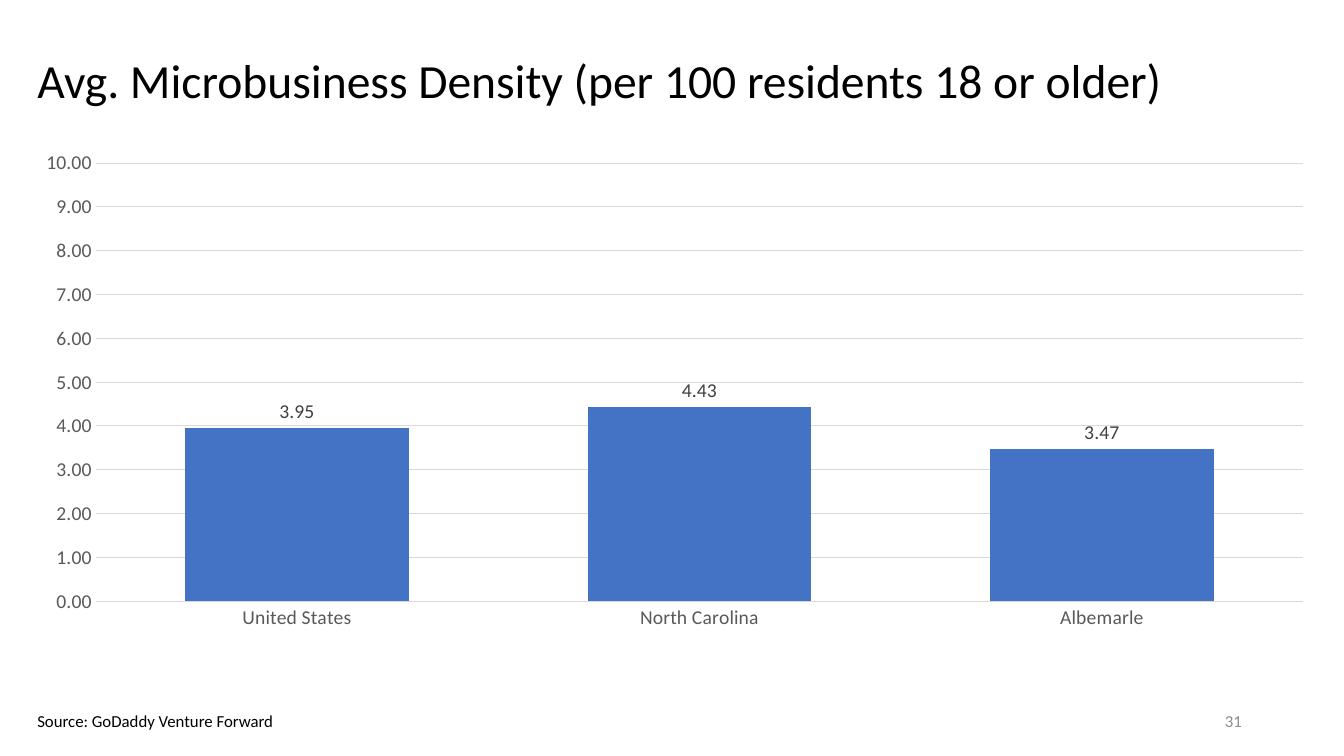
from lxml import etree
from pptx import Presentation
from pptx.chart.data import CategoryChartData
from pptx.dml.color import RGBColor
from pptx.enum.chart import XL_CHART_TYPE, XL_LABEL_POSITION, XL_TICK_MARK
from pptx.enum.text import MSO_ANCHOR, MSO_AUTO_SIZE, PP_ALIGN
from pptx.oxml.ns import qn
from pptx.util import Cm, Pt

COLUMN = XL_CHART_TYPE.COLUMN_CLUSTERED
OUTSIDE = XL_LABEL_POSITION.OUTSIDE_END
NO_TICK = XL_TICK_MARK.NONE
MIDDLE, TOP = MSO_ANCHOR.MIDDLE, MSO_ANCHOR.TOP
NO_FIT = MSO_AUTO_SIZE.NONE
LEFT, RIGHT = PP_ALIGN.LEFT, PP_ALIGN.RIGHT
EDGE = Cm(0.69)


def style(font, size, color):
    font.name = "Calibri"
    font.size = Pt(size)
    font.color.rgb = RGBColor.from_string(color)


def write(box, text, size, color, align, anchor, wrap):
    frame = box.text_frame
    frame.auto_size = NO_FIT
    frame.word_wrap = wrap
    frame.vertical_anchor = anchor
    line = frame.paragraphs[0]
    line.alignment = align
    run = line.add_run()
    run.text = text
    style(run.font, size, color)
    return line


deck = Presentation()
deck.slide_width, deck.slide_height = Cm(33.87), Cm(19.05)
slide = deck.slides.add_slide(deck.slide_layouts[5])

title = slide.shapes.title
title.left, title.top = EDGE, Cm(0.51)
title.width, title.height = Cm(32.41), Cm(3.15)
head = write(title, "Avg. Microbusiness Density (per 100 residents 18 or older)",
             34, "000000", LEFT, MIDDLE, True)
head.line_spacing = 0.9

number = slide.shapes.add_textbox(Cm(23.93), Cm(17.65), Cm(7.62), Cm(1.02))
write(number, "31", 12, "8C8C8C", RIGHT, MIDDLE, True)

source = slide.shapes.add_textbox(EDGE, Cm(17.78), Cm(6.73), Cm(0.77))
write(source, "Source: GoDaddy Venture Forward", 12, "000000", LEFT, TOP, False)

data = CategoryChartData(number_format="0.00")
data.categories = ["United States", "North Carolina", "Albemarle"]
data.add_series("Series 1", [3.95, 4.43, 3.47])
chart = slide.shapes.add_chart(
    COLUMN, EDGE, Cm(3.63), Cm(32.51), Cm(13.72), data).chart
style(chart.font, 14, "000000")
chart.has_legend = False
chart.has_title = False

places, values = chart.category_axis, chart.value_axis
for axis in (places, values):
    style(axis.tick_labels.font, 14, "595959")
    axis.major_tick_mark = axis.minor_tick_mark = NO_TICK
values.minimum_scale, values.maximum_scale = 0, 10
values.major_unit = 1
values.tick_labels.number_format = "0.00"
values.tick_labels.number_format_is_linked = False
values.format.line.fill.background()
values.has_major_gridlines = True
for rule in (places.format.line, values.major_gridlines.format.line):
    rule.width = Pt(0.75)
    rule.color.rgb = RGBColor.from_string("D9D9D9")

plot = chart.plots[0]
plot.gap_width = 80
plot.vary_by_categories = False
bars = plot.series[0]
bars.format.fill.solid()
bars.format.fill.fore_color.rgb = RGBColor.from_string("4472C4")
plot.has_data_labels = True
labels = plot.data_labels
labels.show_value = True
labels.position = OUTSIDE
labels.number_format = "0.00"
labels.number_format_is_linked = False
style(labels.font, 14, "404040")

area = chart.element.find(".//" + qn("c:plotArea"))
for old in area.findall(qn("c:layout")):
    area.remove(old)
layout = etree.Element(qn("c:layout"))
area.insert(0, layout)
manual = etree.SubElement(layout, qn("c:manualLayout"))
for tag, val in (("layoutTarget", "inner"), ("xMode", "edge"), ("yMode", "edge"),
                 ("x", "0.053"), ("y", "0.035"), ("w", "0.936"), ("h", "0.805")):
    etree.SubElement(manual, qn("c:" + tag)).set("val", val)

deck.save("out.pptx")
